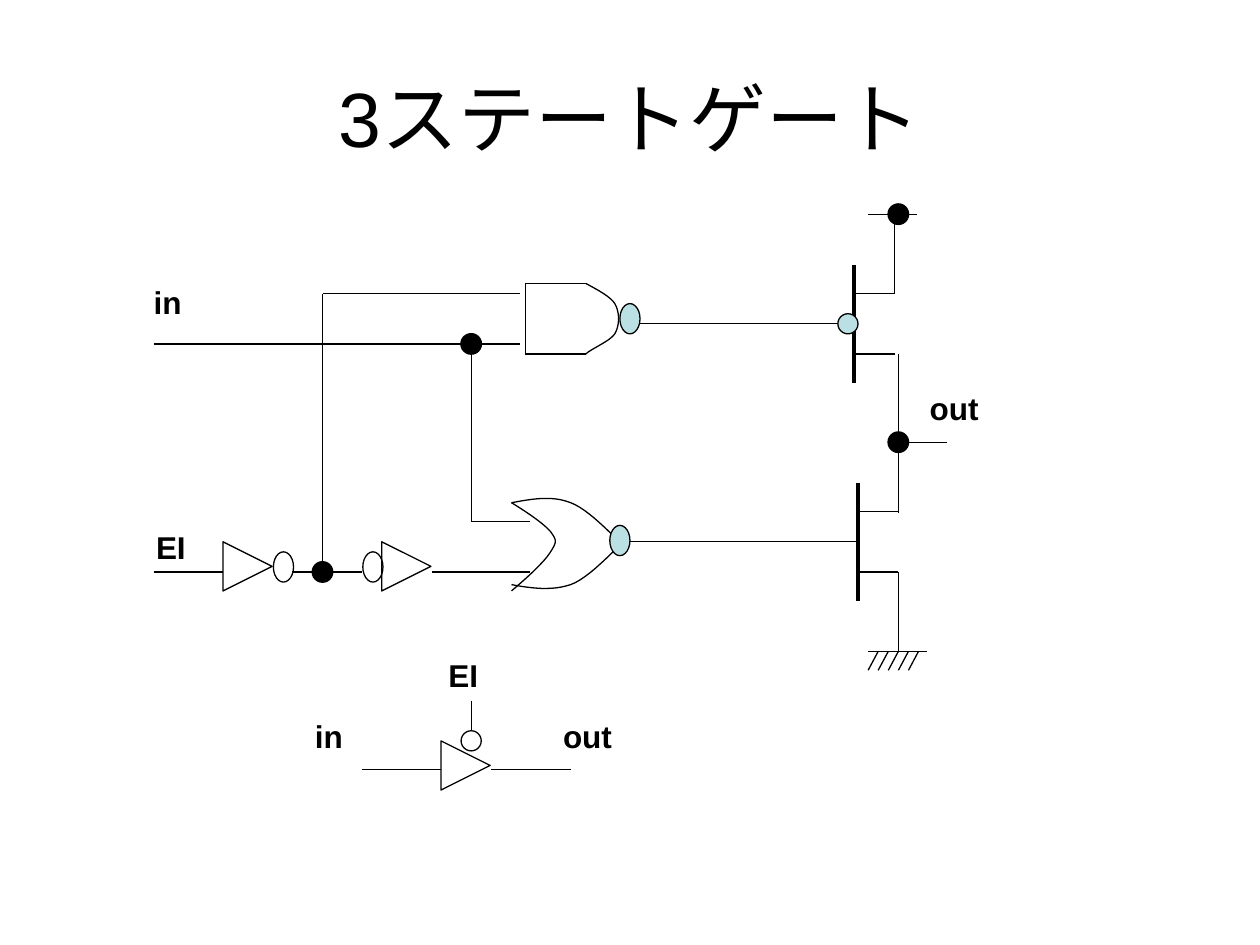
from lxml import etree
from pptx import Presentation
from pptx.dml.color import RGBColor
from pptx.enum import shapes, text
from pptx.oxml.ns import qn
from pptx.util import Inches, Pt

BLACK = "000000"
BUBBLE = "BBE0E3"
CURVE_STEPS = 12


def color(value):
    return RGBColor.from_string(value)


def add_text(slide, content, left, top, width, height, size=18, bold=True,
             align=text.PP_ALIGN.LEFT, anchor=text.MSO_ANCHOR.TOP, wrap=False):
    label = slide.shapes.add_textbox(Inches(left), Inches(top), Inches(width), Inches(height))
    frame = label.text_frame
    frame.word_wrap = wrap
    frame.vertical_anchor = anchor
    frame.auto_size = text.MSO_AUTO_SIZE.NONE if wrap else text.MSO_AUTO_SIZE.SHAPE_TO_FIT_TEXT
    paragraph = frame.paragraphs[0]
    paragraph.alignment = align
    run = paragraph.add_run()
    run.text = content
    run.font.name = "Arial"
    run.font.size = Pt(size)
    run.font.bold = bold
    run.font.color.rgb = color(BLACK)


def add_wire(slide, x1, y1, x2, y2, weight=0.75):
    wire = slide.shapes.add_connector(shapes.MSO_CONNECTOR.STRAIGHT,
                                      Inches(x1), Inches(y1), Inches(x2), Inches(y2))
    wire.line.color.rgb = color(BLACK)
    wire.line.width = Pt(weight)
    etree.SubElement(wire._element.spPr, qn("a:effectLst"))


def style(part, fill=None, weight=0.75):
    part.shadow.inherit = False
    if fill:
        part.fill.solid()
        part.fill.fore_color.rgb = color(fill)
    else:
        part.fill.background()
    part.line.color.rgb = color(BLACK)
    part.line.width = Pt(weight)


def add_oval(slide, center_x, center_y, width=0.16, height=0.16, fill=None, weight=0.75):
    oval = slide.shapes.add_shape(shapes.MSO_SHAPE.OVAL, Inches(center_x - width / 2),
                                  Inches(center_y - height / 2), Inches(width), Inches(height))
    style(oval, fill, weight)


def add_buffer(slide, left, top):
    buffer = slide.shapes.add_shape(shapes.MSO_SHAPE.ISOSCELES_TRIANGLE, Inches(left),
                                    Inches(top), Inches(0.39), Inches(0.39))
    buffer.rotation = 90
    style(buffer)


def bezier(points, t):
    weights = ((1 - t) ** 3, 3 * t * (1 - t) ** 2, 3 * t ** 2 * (1 - t), t ** 3)
    return tuple(Inches(sum(w * p[axis] for w, p in zip(weights, points))) for axis in (0, 1))


def add_curve(slide, points):
    outline = [bezier(points[i:i + 4], step / CURVE_STEPS)
               for i in range(0, len(points) - 1, 3)
               for step in range(1, CURVE_STEPS + 1)]
    builder = slide.shapes.build_freeform(Inches(points[0][0]), Inches(points[0][1]))
    builder.add_line_segments(outline, close=False)
    style(builder.convert_to_shape())


def add_transistor(slide, bar_x, top, lead_x):
    add_wire(slide, bar_x, top, bar_x, top + 0.94, weight=2.25)
    for lead_y in (top + 0.23, top + 0.71):
        add_wire(slide, bar_x, lead_y, lead_x, lead_y)


def add_output_stage(slide):
    add_transistor(slide, 6.78, 2.1, 7.1)
    add_transistor(slide, 6.81, 3.83, 7.13)
    for wire in ((7.1, 2.33, 7.1, 1.7), (6.89, 1.7, 7.28, 1.7),
                 (7.13, 4.07, 7.13, 2.81), (7.13, 3.51, 7.52, 3.51),
                 (7.13, 5.17, 7.13, 4.54), (6.34, 2.57, 6.65, 2.57),
                 (6.34, 4.3, 6.81, 4.3)):
        add_wire(slide, *wire)
    add_oval(slide, 6.73, 2.57, fill=BUBBLE)


def add_ground(slide):
    add_wire(slide, 6.89, 5.17, 7.36, 5.17)
    for i in range(5):
        hatch_x = 6.97 + 0.08 * i
        add_wire(slide, hatch_x, 5.17, hatch_x - 0.08, 5.32)


def add_nand(slide):
    for wire in ((4.17, 2.25, 4.65, 2.25), (4.17, 2.81, 4.65, 2.81),
                 (4.17, 2.25, 4.17, 2.81), (3.9, 2.33, 4.13, 2.33),
                 (3.9, 2.73, 4.13, 2.73), (5.08, 2.57, 6.34, 2.57)):
        add_wire(slide, *wire)
    add_curve(slide, [(4.65, 2.25), (4.74, 2.3), (4.84, 2.35), (4.88, 2.41),
                      (4.92, 2.48), (4.92, 2.58), (4.88, 2.65),
                      (4.84, 2.71), (4.69, 2.77), (4.65, 2.81)])
    add_oval(slide, 5, 2.53, height=0.24, fill=BUBBLE)


def add_nor(slide):
    add_curve(slide, [(4.06, 3.99), (4.22, 3.96), (4.38, 3.93), (4.53, 3.99),
                      (4.67, 4.04), (4.86, 4.25), (4.92, 4.3)])
    add_curve(slide, [(4.06, 4.64), (4.22, 4.67), (4.38, 4.69), (4.53, 4.64),
                      (4.67, 4.59), (4.86, 4.38), (4.92, 4.33)])
    add_curve(slide, [(4.06, 3.99), (4.19, 4.07), (4.32, 4.16), (4.37, 4.22),
                      (4.42, 4.29), (4.42, 4.3), (4.37, 4.38),
                      (4.32, 4.46), (4.19, 4.58), (4.06, 4.69)])
    for wire in ((3.74, 4.14, 4.21, 4.14), (3.98, 4.54, 4.21, 4.54), (5, 4.3, 6.42, 4.3)):
        add_wire(slide, *wire)
    add_oval(slide, 4.92, 4.29, height=0.24, fill=BUBBLE)


def add_inputs(slide):
    for buffer_x, bubble_x in ((1.77, 2.25), (3.03, 2.96)):
        add_buffer(slide, buffer_x, 4.3)
        add_oval(slide, bubble_x, 4.5, height=0.24)
    for wire in ((1.22, 4.54, 1.77, 4.54), (2.32, 4.54, 2.87, 4.54),
                 (3.43, 4.54, 3.98, 4.54), (1.22, 2.73, 3.9, 2.73),
                 (2.56, 4.54, 2.56, 2.33), (2.56, 2.33, 3.98, 2.33),
                 (3.74, 4.14, 3.74, 2.73)):
        add_wire(slide, *wire)


def add_symbol(slide):
    add_buffer(slide, 3.5, 5.88)
    add_oval(slide, 3.74, 5.88)
    for wire in ((3.74, 5.56, 3.74, 5.8), (2.87, 6.11, 3.5, 6.11), (3.9, 6.11, 4.53, 6.11)):
        add_wire(slide, *wire)


def main():
    deck = Presentation()
    deck.slide_width, deck.slide_height = Inches(10), Inches(7.5)
    slide = deck.slides.add_slide(deck.slide_layouts[6])

    add_text(slide, "3ステートゲート", 0.5, 0.3, 9, 1.25, size=44, bold=False,
             align=text.PP_ALIGN.CENTER, anchor=text.MSO_ANCHOR.MIDDLE, wrap=True)
    add_output_stage(slide)
    add_ground(slide)
    add_nand(slide)
    add_nor(slide)
    add_inputs(slide)
    add_symbol(slide)

    label_widths = {"in": 0.42, "EI": 0.44, "out": 0.59}
    for signal, left, top in (("in", 1.12, 2.2), ("EI", 1.14, 4.14), ("out", 7.28, 3.04),
                              ("EI", 3.46, 5.16), ("in", 2.4, 5.64), ("out", 4.37, 5.64)):
        add_text(slide, signal, left, top, label_widths[signal], 0.4)
    for junction_x, junction_y in ((3.74, 2.73), (7.13, 3.51), (2.56, 4.54), (7.13, 1.7)):
        add_oval(slide, junction_x, junction_y, fill=BLACK, weight=1)

    deck.save("out.pptx")


if __name__ == "__main__":
    main()
